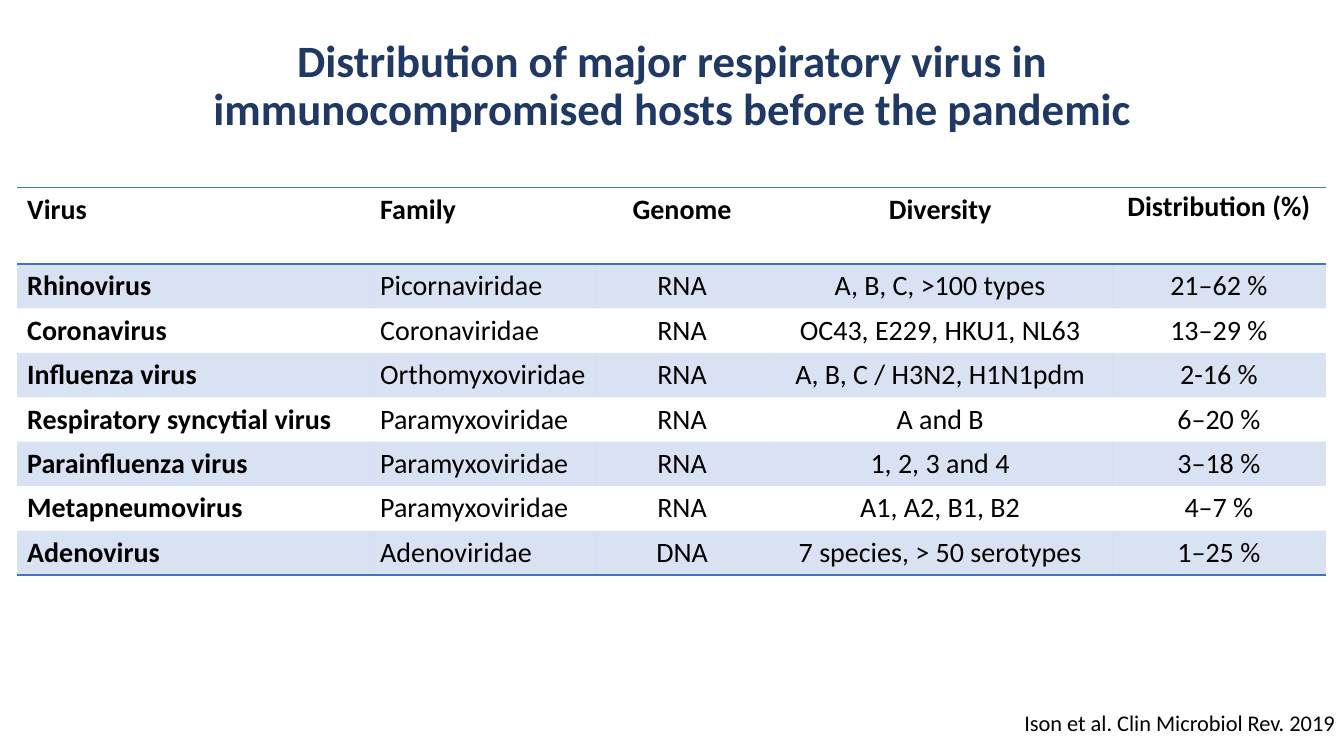
from typing import NamedTuple

from lxml import etree
from pptx import Presentation
from pptx.dml.color import RGBColor
from pptx.enum.text import MSO_ANCHOR, MSO_AUTO_SIZE, PP_ALIGN
from pptx.oxml.ns import qn
from pptx.util import Inches, Pt

LEFT, CENTER, RIGHT = PP_ALIGN.LEFT, PP_ALIGN.CENTER, PP_ALIGN.RIGHT
MIDDLE = MSO_ANCHOR.MIDDLE
NO_AUTOFIT = MSO_AUTO_SIZE.NONE

FONT = "Calibri"
NAVY, BLACK, BLUE = "203864", "000000", "4472C4"
BAND_ALPHA = 20000
PLAIN_TABLE_STYLE = "{2D5ABB26-0587-4C30-8999-92F81FD0307C}"
HEADER_HEIGHT, ROW_HEIGHT = 0.76, 0.44


class Column(NamedTuple):
    heading: str
    width: float
    align: PP_ALIGN


class Virus(NamedTuple):
    name: str
    family: str
    genome: str
    diversity: str
    distribution: str


COLUMNS = [
    Column("Virus", 3.5, LEFT),
    Column("Family", 2.24, LEFT),
    Column("Genome", 1.71, CENTER),
    Column("Diversity", 3.41, CENTER),
    Column("Distribution (%)", 2.12, CENTER),
]
VIRUSES = [
    Virus("Rhinovirus", "Picornaviridae", "RNA", "A, B, C, >100 types", "21–62 %"),
    Virus("Coronavirus", "Coronaviridae", "RNA", "OC43, E229, HKU1, NL63", "13–29 %"),
    Virus("Influenza virus", "Orthomyxoviridae", "RNA", "A, B, C / H3N2, H1N1pdm", "2-16 %"),
    Virus("Respiratory syncytial virus", "Paramyxoviridae", "RNA", "A and B", "6–20 %"),
    Virus("Parainfluenza virus", "Paramyxoviridae", "RNA", "1, 2, 3 and 4", "3–18 %"),
    Virus("Metapneumovirus", "Paramyxoviridae", "RNA", "A1, A2, B1, B2", "4–7 %"),
    Virus("Adenovirus", "Adenoviridae", "DNA", "7 species, > 50 serotypes", "1–25 %"),
]


def color(value: str) -> RGBColor:
    return RGBColor.from_string(value)


def set_all(target, values: dict) -> None:
    for name, value in values.items():
        setattr(target, name, value)


def write(frame, text: str, size: float, ink: str, bold: bool, align: PP_ALIGN,
          line_spacing: float = 1.0) -> None:
    para = frame.paragraphs[0]
    set_all(para, {"alignment": align, "line_spacing": line_spacing})
    span = para.add_run()
    span.text = text
    set_all(span.font, {"name": FONT, "size": Pt(size), "bold": bold})
    span.font.color.rgb = color(ink)


def place(shape, left: float, top: float, width: float, height: float) -> None:
    set_all(shape, {"left": Inches(left), "top": Inches(top),
                    "width": Inches(width), "height": Inches(height)})


def add_rule(cell, side: str) -> None:
    line = etree.SubElement(cell._tc.get_or_add_tcPr(), qn(f"a:{side}"), w=str(Pt(1)))
    fill = etree.SubElement(line, qn("a:solidFill"))
    etree.SubElement(fill, qn("a:srgbClr"), val=BLUE)


def fill_band(cell) -> None:
    cell.fill.solid()
    cell.fill.fore_color.rgb = color(BLUE)
    tint = cell._tc.tcPr.find(f"{qn('a:solidFill')}/{qn('a:srgbClr')}")
    etree.SubElement(tint, qn("a:alpha"), val=str(BAND_ALPHA))


def add_virus_table(page) -> None:
    rows = [[column.heading for column in COLUMNS], *VIRUSES]
    heights = [HEADER_HEIGHT] + [ROW_HEIGHT] * len(VIRUSES)
    width = sum(column.width for column in COLUMNS)
    table = page.shapes.add_table(
        len(rows), len(COLUMNS), Inches(0.17), Inches(1.86),
        Inches(width), Inches(sum(heights))).table
    set_all(table, {"first_row": False, "horz_banding": False})
    table._tbl.tblPr.find(qn("a:tableStyleId")).text = PLAIN_TABLE_STYLE

    for index, column in enumerate(COLUMNS):
        table.columns[index].width = Inches(column.width)
    for row, texts in enumerate(rows):
        table.rows[row].height = Inches(heights[row])
        for index, text in enumerate(texts):
            cell = table.cell(row, index)
            last_heading = row == 0 and index == len(COLUMNS) - 1
            if last_heading:
                set_all(cell, {"margin_left": Inches(0.07), "margin_right": Inches(0.07),
                               "margin_top": 0, "margin_bottom": 0})
            write(cell.text_frame, text, 20, BLACK, row == 0 or index == 0,
                  COLUMNS[index].align, 1.07 if last_heading else 1.0)
            if row == 0:
                add_rule(cell, "lnT")
            if row in (0, len(VIRUSES)):
                add_rule(cell, "lnB")
            if row % 2:
                fill_band(cell)
            else:
                cell.fill.background()


def main() -> None:
    deck = Presentation()
    set_all(deck, {"slide_width": Inches(13.33), "slide_height": Inches(7.5)})
    page = deck.slides.add_slide(deck.slide_layouts[5])

    # Title
    title = page.shapes.title
    place(title, 0.92, 0.14, 11.5, 1.45)
    set_all(title.text_frame, {"word_wrap": True, "auto_size": NO_AUTOFIT,
                               "vertical_anchor": MIDDLE})
    write(title.text_frame,
          "Distribution of major respiratory virus in immunocompromised hosts "
          "before the pandemic", 32, NAVY, True, CENTER, 0.9)

    # Virus table
    add_virus_table(page)

    # Reference
    box = page.shapes.add_textbox(Inches(6.67), Inches(6.98), Inches(6.67), Inches(0.38))
    set_all(box.text_frame, {"word_wrap": True, "vertical_anchor": MIDDLE})
    write(box.text_frame, "Ison et al. Clin Microbiol Rev. 2019", 16, BLACK, False, RIGHT)

    deck.save("out.pptx")


if __name__ == "__main__":
    main()
